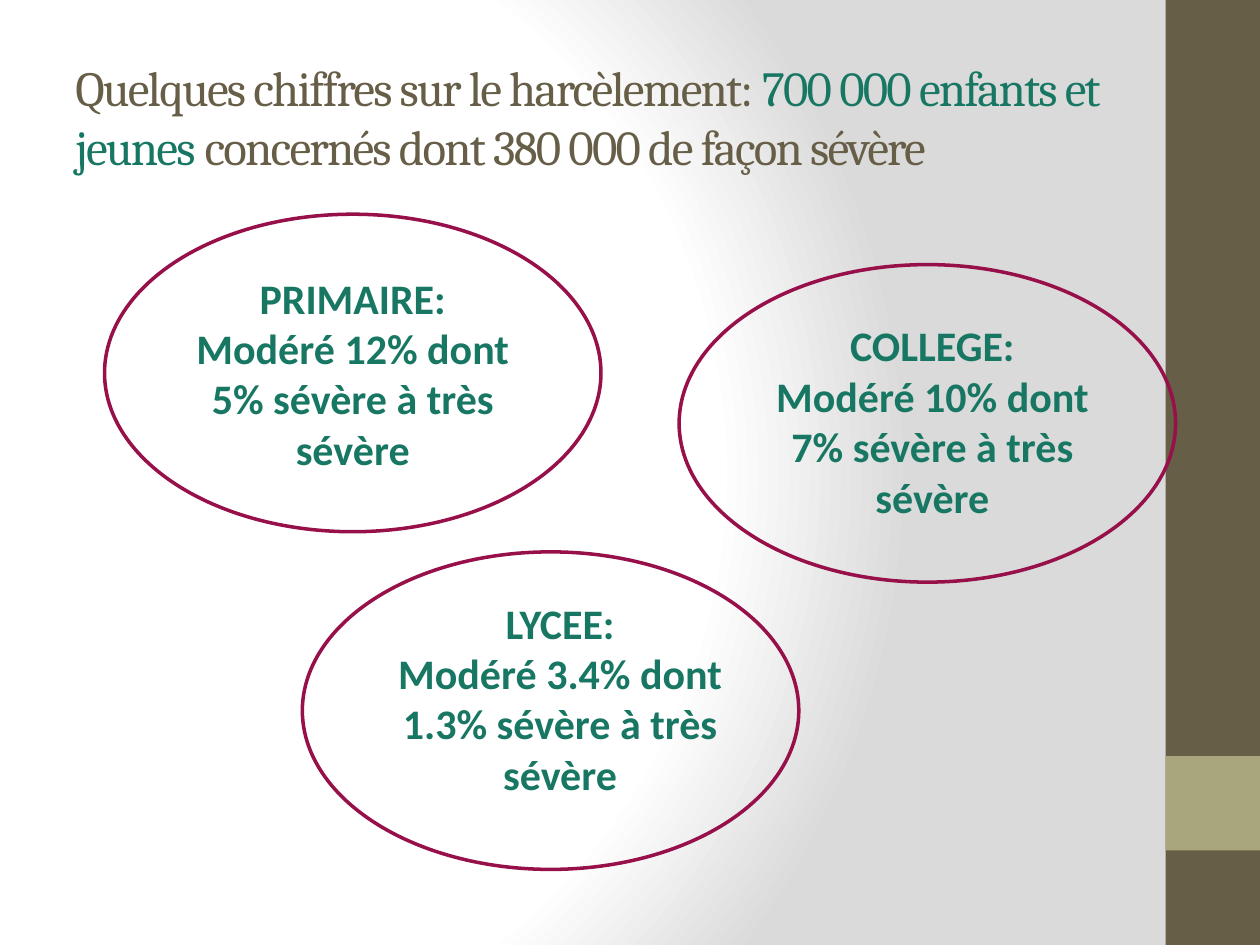
from lxml.etree import SubElement
from pptx import Presentation
from pptx.dml.color import RGBColor
from pptx.enum.shapes import MSO_SHAPE
from pptx.enum.text import MSO_ANCHOR, PP_ALIGN
from pptx.oxml import parse_xml
from pptx.oxml.ns import nsdecls, qn
from pptx.util import Inches, Pt


def rgb(color):
    return RGBColor.from_string(color)


def write_level(tf, lines):
    tf.word_wrap = True
    for i, line in enumerate(lines):
        p = tf.paragraphs[0] if i == 0 else tf.add_paragraph()
        p.text = line
        p.alignment = PP_ALIGN.CENTER
        p.font.name = "Calibri"
        p.font.size = Pt(24)
        p.font.bold = True
        p.font.color.rgb = rgb(GREEN)


BROWN, OLIVE, GREEN, PLUM = "675E47", "A9A57C", "187763", "97104A"

prs = Presentation()
prs.slide_width, prs.slide_height = Inches(10), Inches(7.5)
W, H = prs.slide_width, prs.slide_height
s = prs.slides.add_slide(prs.slide_layouts[6])

s.background.fill.solid()
bg = s._element.find(".//" + qn("p:bgPr"))
grad = parse_xml(f'<a:gradFill {nsdecls("a")} rotWithShape="1"/>')
stops = SubElement(grad, qn("a:gsLst"))
for pos, color in [(0, "FFFFFF"), (75, "FFFFFF"), (100, "DADADA")]:
    gs = SubElement(stops, qn("a:gs"), pos=str(pos * 1000))
    SubElement(gs, qn("a:srgbClr"), val=color)
focus = SubElement(grad, qn("a:path"), path="circle")
SubElement(focus, qn("a:fillToRect"), l="20000", t="50000", r="100000", b="50000")
bg.replace(bg[0], grad)

band = W * 0.075
for top, height, color in [(0, H, BROWN), (H * 0.8, H * 0.1, OLIVE)]:
    sp = s.shapes.add_shape(MSO_SHAPE.RECTANGLE, int(W - band), int(top), int(band), int(height))
    sp.shadow.inherit = False
    sp.fill.solid()
    sp.fill.fore_color.rgb = rgb(color)
    sp.line.fill.background()

tf = s.shapes.add_textbox(Inches(0.5), Inches(0.3), Inches(8.33), Inches(1.25)).text_frame
tf.word_wrap = True
tf.vertical_anchor = MSO_ANCHOR.MIDDLE
p = tf.paragraphs[0]
p.font.name = "Cambria"
p.font.size = Pt(28)
for text, color in [
    ("Quelques chiffres sur le harcèlement: ", BROWN),
    ("700 000 enfants et jeunes ", GREEN),
    ("concernés dont 380 000 de façon sévère", BROWN),
]:
    r = p.add_run()
    r.text = text
    r.font.color.rgb = rgb(color)
    r.font._element.set("spc", "-100")

levels = [
    (0.83, 1.7, ["PRIMAIRE:", "Modéré 12% dont 5% sévère à très sévère"], None),
    (2.4, 4.38, ["LYCEE:", "Modéré 3.4% dont 1.3% sévère à très sévère"], (2.95, 4.69, 2.99)),
    (5.39, 2.1, ["COLLEGE:", "Modéré 10% dont 7% sévère à très sévère"], (6.02, 2.49, 2.76)),
]
for left, top, lines, box in levels:
    sp = s.shapes.add_shape(MSO_SHAPE.OVAL, Inches(left), Inches(top), Inches(3.94), Inches(2.52))
    sp.shadow.inherit = False
    sp.fill.background()
    sp.line.color.rgb = rgb(PLUM)
    sp.line.width = Pt(2)
    if box:
        x, y, width = box
        sp = s.shapes.add_textbox(Inches(x), Inches(y), Inches(width), Inches(1.72))
    write_level(sp.text_frame, lines)

prs.save("out.pptx")
